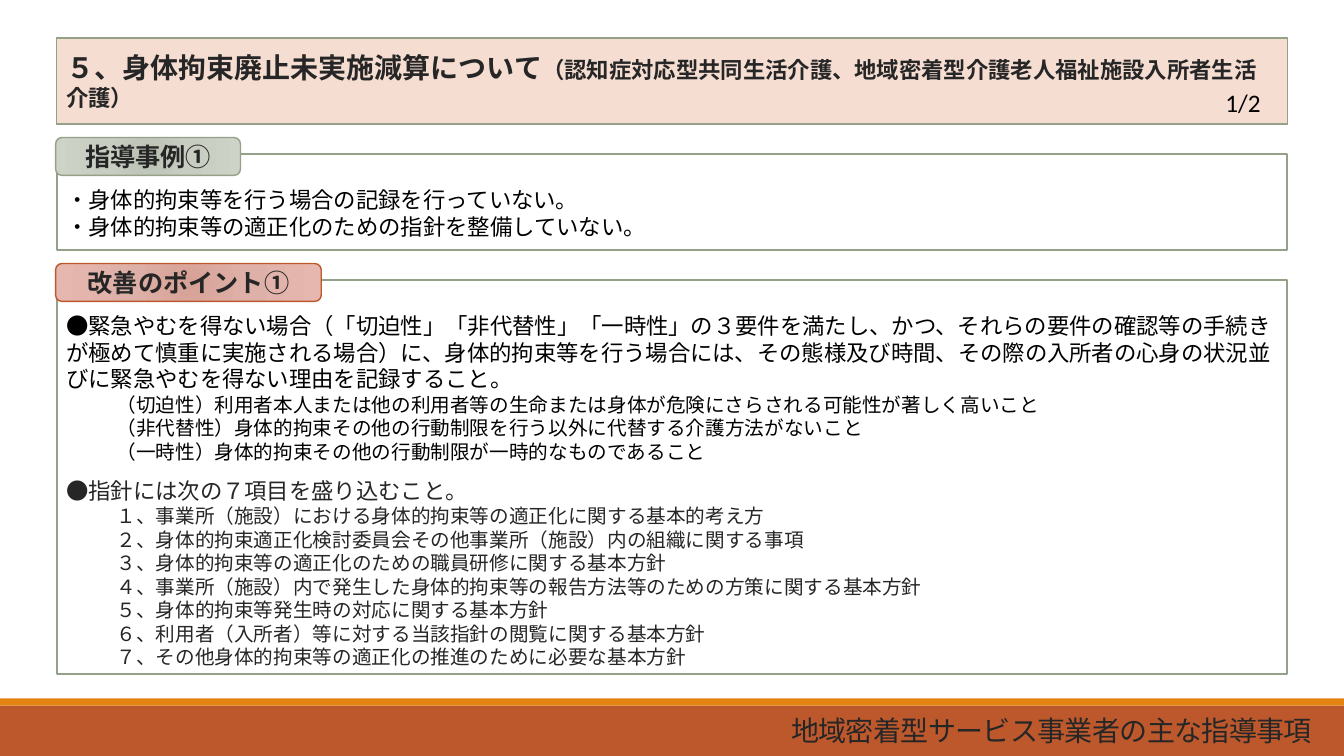
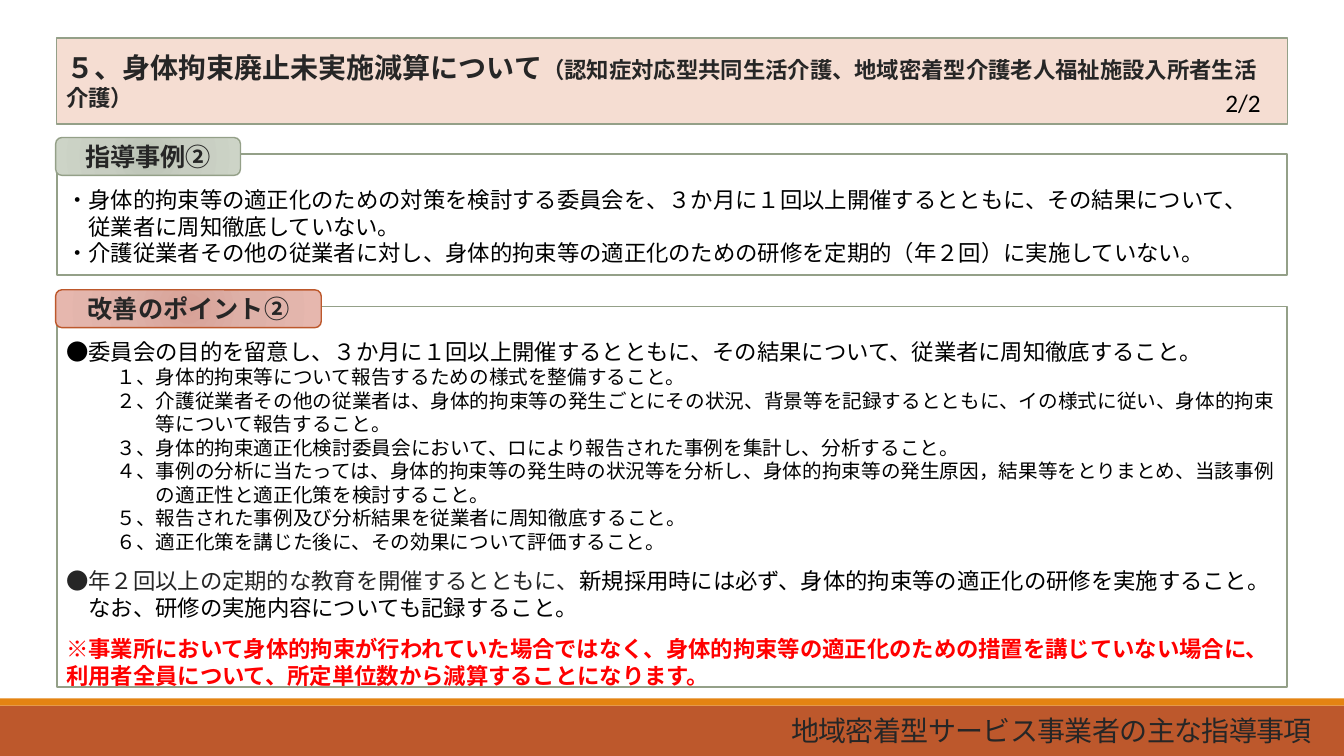
from copy import deepcopy
from dataclasses import dataclass

from lxml import etree
from pptx import Presentation
from pptx.dml.color import RGBColor
from pptx.enum.lang import MSO_LANGUAGE_ID as Lang
from pptx.enum.shapes import MSO_SHAPE as Kind
from pptx.enum.text import MSO_ANCHOR as Anchor, MSO_AUTO_SIZE as Auto, PP_ALIGN as Align
from pptx.oxml.ns import qn
from pptx.util import Emu, Pt

# Shared style
FONT = "Noto Sans CJK JP"
INK, BLACK, RED, WHITE = "262626", "000000", "FF0000", "FFFFFF"
SAGE, RUST, AMBER, BLUSH = "94A088", "BD582C", "E48312", "F5DDD2"
LEFT, WIDE = 54, 1172
LEAD = 1.2
TITLE = "５、身体拘束廃止未実施減算について"
SCOPE = "（認知症対応型共同生活介護、地域密着型介護老人福祉施設入所者生活介護）"
FOOT = "地域密着型サービス事業者の主な指導事項"


@dataclass(frozen=True)
class Run:
    text: str
    size: int = 16
    color: str = BLACK
    bold: bool = False
    font: str = FONT


@dataclass(frozen=True)
class Para:
    runs: tuple[Run, ...]
    level: int = 0
    hang: int = 0
    gap: int = 0
    lead: float = 0
    align: Align = Align.LEFT


@dataclass(frozen=True)
class Tag:
    label: str
    width: int
    line: str
    stops: tuple[str, str, str]


@dataclass(frozen=True)
class Panel:
    top: int
    high: int
    tag: Tag
    paras: tuple[Para, ...]


@dataclass(frozen=True)
class Page:
    mark: str
    panels: tuple[Panel, Panel]


def px(n: int) -> Emu:
    return Emu(n * 9525)


def rgb(code: str) -> RGBColor:
    return RGBColor.from_string(code)


def paint(shape, fill: str, line: str = "", width: float = 1) -> None:
    shape.fill.solid()
    shape.fill.fore_color.rgb = rgb(fill)
    edge(shape, line, width)


def edge(shape, line: str, width: float = 1) -> None:
    if line:
        shape.line.color.rgb = rgb(line)
        shape.line.width = Pt(width)
    else:
        shape.line.fill.background()


def place(shape, left: int, top: int, width: int, high: int) -> None:
    shape.left, shape.top = px(left), px(top)
    shape.width, shape.height = px(width), px(high)


# Text
def style(run, look: Run) -> None:
    font = run.font
    font.size, font.bold, font.name = Pt(look.size), look.bold, look.font
    font.color.rgb = rgb(look.color)
    font.language_id = Lang.JAPANESE
    east = etree.SubElement(run._r.rPr, qn("a:ea"))
    east.set("typeface", look.font)


def fill_para(para, data: Para) -> None:
    para.alignment, para.level = data.align, data.level
    para.space_before, para.space_after = Pt(data.gap), Pt(0)
    para.line_spacing = Pt(data.lead) if data.lead else 1.0
    for look in data.runs:
        for row, text in enumerate(look.text.split("\n")):
            if row:
                para.add_line_break()
            run = para.add_run()
            run.text = text
            style(run, look)
            if row:
                run._r.getprevious().append(deepcopy(run._r.rPr))
    hang = Pt(data.hang * data.runs[0].size)
    props = para._p.get_or_add_pPr()
    props.set("marL", str(px(48 * data.level) + hang))
    props.set("indent", str(-hang))
    etree.SubElement(props, qn("a:buNone"))


def write(shape, paras: tuple[Para, ...], anchor: Anchor, top: int = 5, right: int = 9) -> None:
    frame = shape.text_frame
    frame.word_wrap, frame.auto_size = True, Auto.NONE
    frame.vertical_anchor = anchor
    frame.margin_left, frame.margin_right = px(9), px(right)
    frame.margin_top, frame.margin_bottom = px(top), px(5)
    for i, data in enumerate(paras):
        fill_para(frame.add_paragraph() if i else frame.paragraphs[0], data)


# Shapes
def draw_tag(slide, tag: Tag, top: int) -> None:
    shape = slide.shapes.add_shape(Kind.ROUNDED_RECTANGLE, px(LEFT - 1), px(top), px(tag.width), px(36))
    shape.shadow.inherit = False
    shape.fill.gradient()
    grad = shape.element.spPr.find(qn("a:gradFill"))
    for child in list(grad):
        grad.remove(child)
    stops = etree.SubElement(grad, qn("a:gsLst"))
    for pos, color in zip((0, 45, 100), tag.stops):
        stop = etree.SubElement(stops, qn("a:gs"), pos=str(pos * 1000))
        etree.SubElement(stop, qn("a:srgbClr"), val=color)
    way = etree.SubElement(grad, qn("a:path"))
    way.set("path", "circle")
    etree.SubElement(way, qn("a:fillToRect"), {side: "100000" for side in "ltrb"})
    edge(shape, tag.line)
    label = Para((Run(tag.label, 18, INK, True),), align=Align.CENTER)
    write(shape, (label,), Anchor.MIDDLE, top=4)


def draw_panel(slide, body, panel: Panel) -> None:
    place(body, LEFT, panel.top, WIDE, panel.high)
    paint(body, WHITE, SAGE, 1.25)
    write(body, panel.paras, Anchor.TOP, top=30, right=4)
    draw_tag(slide, panel.tag, panel.top - 16)


def add_text(slide, box: tuple[int, int, int, int], para: Para, anchor: Anchor, top: int = 5):
    shape = slide.shapes.add_textbox(*map(px, box))
    write(shape, (para,), anchor, top)
    return shape


def draw_bands(slide, layout) -> None:
    """Draw the bottom bands and hand them to the layout."""
    for key, (top, high, color) in enumerate(((672, 48, RUST), (665, 7, AMBER)), 20):
        band = slide.shapes.add_shape(Kind.RECTANGLE, 0, px(top), px(1280), px(high))
        band.shadow.inherit = False
        paint(band, color)
        band.element.nvSpPr.cNvPr.set("id", str(key))
        layout.shapes.element.append(band.element)


def draw_page(slide, page: Page) -> None:
    title, *bodies = slide.placeholders
    place(title, LEFT, 36, WIDE, 82)
    paint(title, BLUSH, SAGE)
    head = Para((Run(TITLE, 20, INK, True), Run(SCOPE, 16, INK, True)), lead=19)
    write(title, (head,), Anchor.MIDDLE, top=12)
    for body, panel in zip(bodies, page.panels):
        draw_panel(slide, body, panel)
    foot = Para((Run(FOOT, 20, INK),), lead=20, align=Align.RIGHT)
    note = add_text(slide, (LEFT, 676, 1204, 44), foot, Anchor.MIDDLE, 6)
    note.text_frame.paragraphs[0].runs[0]._r.rPr.set("spc", "-50")
    mark = Para((Run(page.mark, 18, font="Calibri"),))
    add_text(slide, (1158, 78, 68, 38), mark, Anchor.TOP)


# Content
def main_row(*runs: Run, hang: int = 0, gap: int = 0) -> Para:
    return Para(runs, hang=hang, gap=gap, lead=16 * LEAD)


def sub_rows(color: str, *texts: str) -> tuple[Para, ...]:
    return tuple(Para((Run(t, 14, color),), 1, 2 if "\n" in t else 0, lead=14 * LEAD) for t in texts)


def case_tag(sign: str) -> Tag:
    return Tag("指導事例" + sign, 176, SAGE, ("BBC3B5", "C7CDC1", "CDD4C7"))


def point_tag(sign: str) -> Tag:
    return Tag("改善のポイント" + sign, 253, RUST, ("D7A197", "DEB1A8", "E6B7AE"))


PAGES = (
    Page("1/2", (
        Panel(147, 91, case_tag("①"), (
            main_row(Run("・身体的拘束等を行う場合の記録を行っていない。")),
            main_row(Run("・身体的拘束等の適正化のための指針を整備していない。")),
        )),
        Panel(267, 375, point_tag("①"), (
            main_row(Run(
                "●緊急やむを得ない場合（「切迫性」「非代替性」「一時性」の３要件を満たし、かつ、"
                "それらの要件の確認等の手続きが極めて慎重に実施される場合）に、身体的拘束等を行う場合には、"
                "その態様及び時間、その際の入所者の心身の状況並びに緊急やむを得ない理由を記録すること。")),
            *sub_rows(
                BLACK,
                "（切迫性）利用者本人または他の利用者等の生命または身体が危険にさらされる可能性が著しく高いこと",
                "（非代替性）身体的拘束その他の行動制限を行う以外に代替する介護方法がないこと",
                "（一時性）身体的拘束その他の行動制限が一時的なものであること"),
            main_row(Run("●指針には次の７項目を盛り込むこと。", color=INK), gap=10),
            *sub_rows(
                INK,
                "１、事業所（施設）における身体的拘束等の適正化に関する基本的考え方",
                "２、身体的拘束適正化検討委員会その他事業所（施設）内の組織に関する事項",
                "３、身体的拘束等の適正化のための職員研修に関する基本方針",
                "４、事業所（施設）内で発生した身体的拘束等の報告方法等のための方策に関する基本方針",
                "５、身体的拘束等発生時の対応に関する基本方針",
                "６、利用者（入所者）等に対する当該指針の閲覧に関する基本方針",
                "７、その他身体的拘束等の適正化の推進のために必要な基本方針"),
        )),
    )),
    Page("2/2", (
        Panel(147, 115, case_tag("②"), (
            main_row(Run(
                "・身体的拘束等の適正化のための対策を検討する委員会を、３か月に１回以上開催するとともに、"
                "その結果について、\n従業者に周知徹底していない。"), hang=1),
            main_row(Run(
                "・介護従業者その他の従業者に対し、身体的拘束等の適正化のための研修を"
                "定期的（年２回）に実施していない。")),
        )),
        Panel(292, 362, point_tag("②"), (
            main_row(Run(
                "●委員会の目的を留意し、３か月に１回以上開催するとともに、その結果について、"
                "従業者に周知徹底すること。")),
            *sub_rows(
                BLACK,
                "１、身体的拘束等について報告するための様式を整備すること。",
                "２、介護従業者その他の従業者は、身体的拘束等の発生ごとにその状況、背景等を記録するとともに、"
                "イの様式に従い、身体的拘束\n等について報告すること。",
                "３、身体的拘束適正化検討委員会において、ロにより報告された事例を集計し、分析すること。",
                "４、事例の分析に当たっては、身体的拘束等の発生時の状況等を分析し、身体的拘束等の発生原因，"
                "結果等をとりまとめ、当該事例\nの適正性と適正化策を検討すること。",
                "５、報告された事例及び分析結果を従業者に周知徹底すること。",
                "６、適正化策を講じた後に、その効果について評価すること。"),
            main_row(
                Run("●年２回以上の定期的な教育を開催するとともに、", color=INK),
                Run("新規採用時には必ず、身体的拘束等の適正化の研修を実施すること。\n"
                    "なお、研修の実施内容についても記録すること。"), hang=1, gap=10),
            main_row(Run(
                "※事業所において身体的拘束が行われていた場合ではなく、身体的拘束等の適正化のための措置を"
                "講じていない場合に、利用者全員について、所定単位数から減算することになります。",
                color=RED, bold=True), gap=10),
        )),
    )),
)


def main() -> None:
    deck = Presentation()
    deck.slide_width, deck.slide_height = px(1280), px(720)
    layout = deck.slide_layouts[3]
    for i, page in enumerate(PAGES):
        slide = deck.slides.add_slide(layout)
        if i == 0:
            draw_bands(slide, layout)
        draw_page(slide, page)
    deck.save("out.pptx")


if __name__ == "__main__":
    main()
